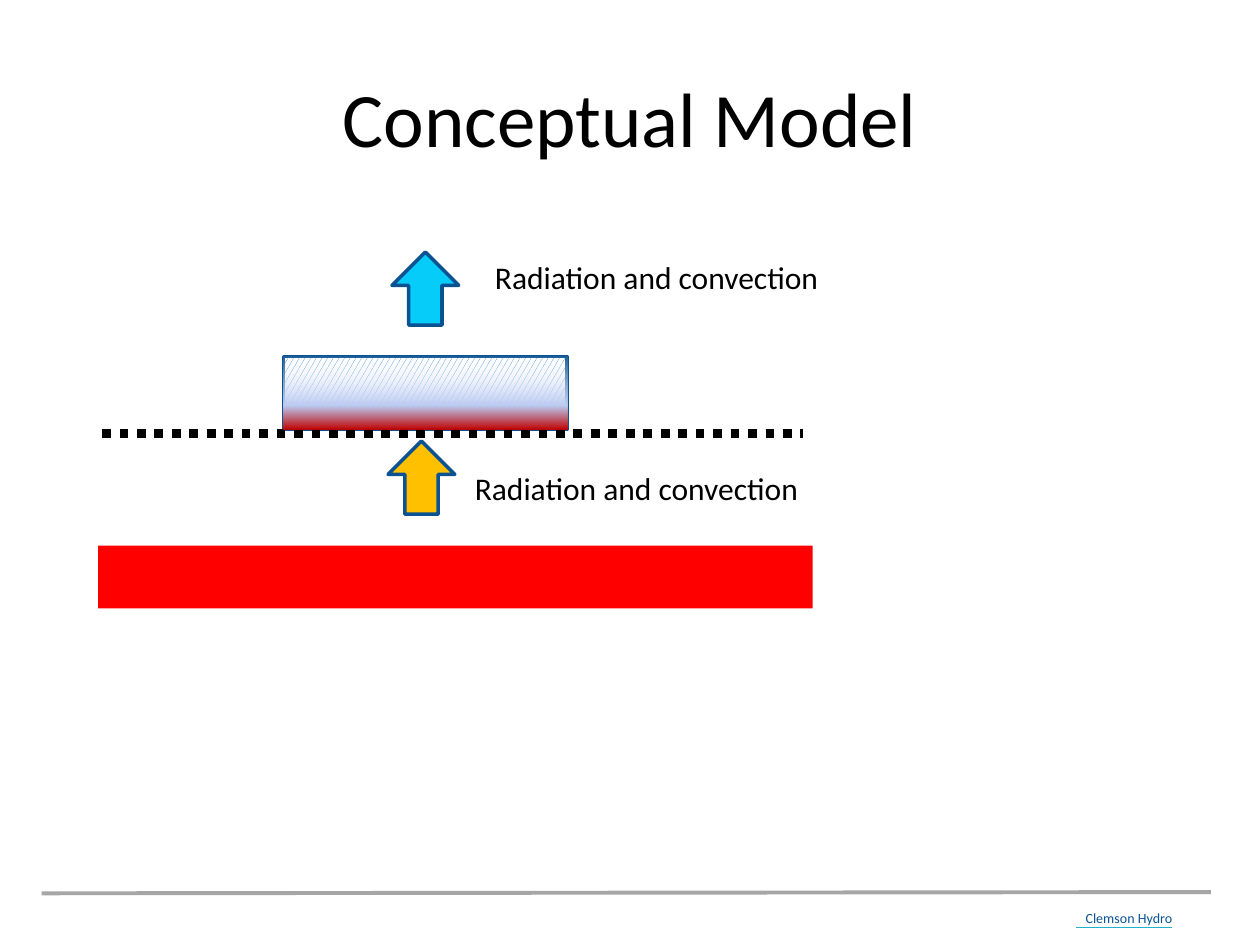
from lxml import etree
from pptx import Presentation
from pptx.dml.color import RGBColor
from pptx.enum import dml, shapes, text
from pptx.oxml.ns import qn
from pptx.util import Inches, Pt

BLACK = RGBColor(0, 0, 0)
WHITE = RGBColor(255, 255, 255)
RED = RGBColor(255, 0, 0)
BLUE = RGBColor(0x0F, 0x6F, 0xC6)
DARK_BLUE = RGBColor(0x0B, 0x52, 0x92)
FOOTER_BLUE = RGBColor(0x0B, 0x53, 0x95)
TEAL = RGBColor(0x21, 0xB2, 0xC9)
GRAY = RGBColor(0xA6, 0xA6, 0xA6)
AMBER = RGBColor(0xFF, 0xC0, 0)
CYAN = RGBColor(0x06, 0xCC, 0xFA)

CENTER, LEFT = text.PP_ALIGN.CENTER, text.PP_ALIGN.LEFT
RECTANGLE = shapes.MSO_SHAPE.RECTANGLE

# Content: wording, (left, top, width, height), size, colour, alignment
FOOTER = ("Clemson Hydro", (8.5, 7.17, 0.92, 0.24), 8, FOOTER_BLUE, CENTER)
TITLE = ("Conceptual Model", (0.5, 0.3, 9, 1.25), 44, BLACK, CENTER)
FLUX_LABELS = [
    ("Radiation and convection", (left, top, 3.08, 0.4), 18, BLACK, LEFT)
    for left, top in [(3.67, 3.67), (3.83, 2)]
]

# Start, end, colour, width in points
FOOTER_RULE = ((0.33, 7.09), (9.61, 7.08), GRAY, 2.25)
FOOTER_UNDERLINE = ((8.54, 7.36), (9.3, 7.36), TEAL, 0.75)
SURFACE_LINE = ((0.81, 3.44), (6.37, 3.44), BLACK, 5)

SLAB = (2.25, 2.83, 2.25, 0.58)
HEATER = (0.78, 4.33, 5.67, 0.5)
FLUX_ARROWS = [((3.08, 3.5, 0.53, 0.58), AMBER), ((3.11, 2, 0.53, 0.58), CYAN)]
# Position and opacity in percent
SLAB_GRADIENT = [(0, "C00000", 100), (33, "BBCBF2", 100), (100, "FFFFFF", 7)]

presentation = Presentation()
presentation.slide_width, presentation.slide_height = Inches(10), Inches(7.5)
slide = presentation.slides.add_slide(presentation.slide_layouts[6])


def add_text(wording, box, size, color, alignment):
    shape = slide.shapes.add_textbox(*map(Inches, box))
    frame = shape.text_frame
    frame.word_wrap = True
    frame.vertical_anchor = text.MSO_ANCHOR.TOP
    paragraph = frame.paragraphs[0]
    paragraph.text = wording
    paragraph.alignment = alignment
    paragraph.font.name = "Calibri"
    paragraph.font.size = Pt(size)
    paragraph.font.color.rgb = color
    return shape


def add_line(start, end, color, width):
    line = slide.shapes.add_connector(
        shapes.MSO_CONNECTOR.STRAIGHT, *map(Inches, start + end))
    line.line.color.rgb = color
    line.line.width = Pt(width)
    etree.SubElement(line._element.spPr, qn("a:effectLst"))
    return line


def add_block(kind, box, fill=None, outline=None):
    shape = slide.shapes.add_shape(kind, *map(Inches, box))
    shape.shadow.inherit = False
    if fill is not None:
        shape.fill.solid()
        shape.fill.fore_color.rgb = fill
    if outline is None:
        shape.line.fill.background()
    else:
        shape.line.color.rgb = outline
        shape.line.width = Pt(2)
    return shape


def set_gradient(shape, stops):
    """Fill from bottom to top with any number of stops."""
    shape.fill.gradient()
    shape.fill.gradient_angle = 90
    stop_list = shape._element.spPr.find(".//" + qn("a:gsLst"))
    for old_stop in list(stop_list):
        stop_list.remove(old_stop)
    for position, color, opacity in stops:
        stop = etree.SubElement(stop_list, qn("a:gs"), pos=str(position * 1000))
        rgb = etree.SubElement(stop, qn("a:srgbClr"), val=color)
        if opacity < 100:
            etree.SubElement(rgb, qn("a:alpha"), val=str(opacity * 1000))


# Footer and title
add_line(*FOOTER_RULE)
add_text(*FOOTER)
add_line(*FOOTER_UNDERLINE)
add_text(*TITLE).text_frame.vertical_anchor = text.MSO_ANCHOR.MIDDLE

# Hatched slab above the heater
hatched_slab = add_block(RECTANGLE, SLAB, outline=DARK_BLUE)
hatched_slab.fill.patterned()
hatched_slab.fill.pattern = dml.MSO_PATTERN.LARGE_CONFETTI
hatched_slab.fill.fore_color.rgb = BLUE
hatched_slab.fill.back_color.rgb = WHITE
add_block(RECTANGLE, HEATER, RED)

# Surface line, heat flux arrows and their labels
surface = add_line(*SURFACE_LINE)
surface.line.dash_style = dml.MSO_LINE.ROUND_DOT  # written as sysDot
for box, color in FLUX_ARROWS:
    arrow = add_block(shapes.MSO_SHAPE.DOWN_ARROW, box, color, DARK_BLUE)
    arrow.rotation = 180
for label in FLUX_LABELS:
    add_text(*label)

# Temperature gradient over the slab
set_gradient(add_block(RECTANGLE, SLAB), SLAB_GRADIENT)

presentation.save("out.pptx")
